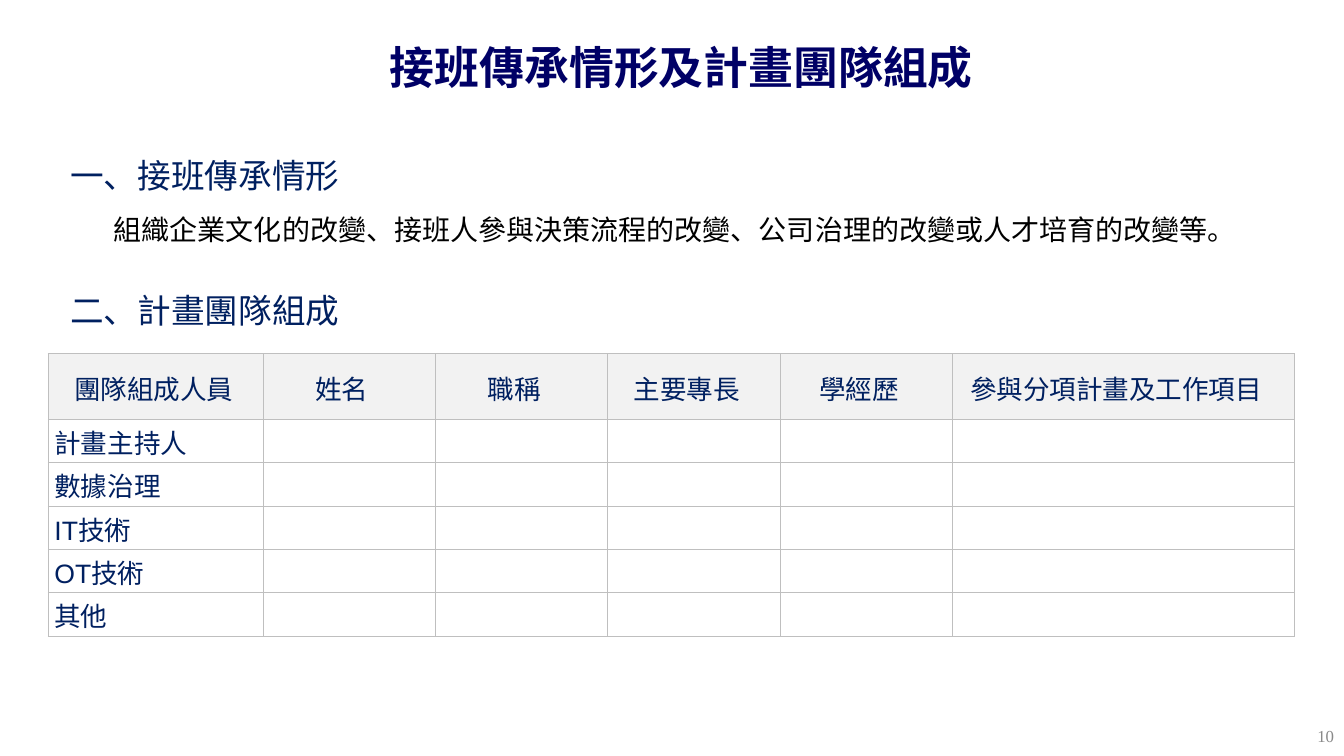
from lxml.etree import SubElement
from pptx import Presentation
from pptx.dml.color import RGBColor
from pptx.enum.text import MSO_ANCHOR, MSO_AUTO_SIZE, PP_ALIGN
from pptx.oxml.ns import qn
from pptx.util import Inches, Pt

NAVY, GRID, HEADER, WHITE = "002060", "BFBFBF", "F2F2F2", "FFFFFF"
COLUMNS = ["團隊組成人員", "姓名", "職稱", "主要專長", "學經歷", "參與分項計畫及工作項目"]
COLUMN_WIDTHS = [2.13] + [1.71] * 4 + [3.39]
MEMBERS = ["計畫主持人", "數據治理", "IT技術", "OT技術", "其他"]
HEADER_HEIGHT, ROW_HEIGHT = 0.65, 0.43


def rgb(color):
    return RGBColor.from_string(color)


def apply(target, values):
    for name, value in values.items():
        setattr(target, name, value)


def write(p, text, size, color, font="Arial", bold=False, indent=0, **layout):
    r = p.add_run()
    r.text = text
    apply(r.font, dict(size=Pt(size), name=font, bold=bold))
    r.font.color.rgb = rgb(color)
    apply(p, layout)
    if indent:
        pPr = p._p.get_or_add_pPr()
        pPr.set("marL", str(Inches(indent)))
        pPr.set("indent", "0")


def place(shape, left, top, width, height, anchor=MSO_ANCHOR.TOP):
    apply(shape, dict(left=Inches(left), top=Inches(top),
                      width=Inches(width), height=Inches(height)))
    tf = shape.text_frame
    apply(tf, dict(word_wrap=True, auto_size=MSO_AUTO_SIZE.NONE,
                   vertical_anchor=anchor))
    return tf


def add_text(s, *box, **options):
    return place(s.shapes.add_textbox(0, 0, 0, 0), *box, **options)


def format_cell(cell, fill):
    tcPr = cell._tc.get_or_add_tcPr()
    for side in ("lnL", "lnR", "lnT", "lnB"):
        ln = SubElement(tcPr, qn(f"a:{side}"), w=str(Pt(0.75)))
        line_fill = SubElement(ln, qn("a:solidFill"))
        SubElement(line_fill, qn("a:srgbClr"), val=GRID)
    cell.fill.solid()
    cell.fill.fore_color.rgb = rgb(fill)
    apply(cell, dict(vertical_anchor=MSO_ANCHOR.MIDDLE,
                     margin_left=Inches(0.03), margin_right=Inches(0.03),
                     margin_top=Inches(0.02), margin_bottom=0))


def add_team_table(s, left, top):
    heights = [HEADER_HEIGHT] + [ROW_HEIGHT] * len(MEMBERS)
    table = s.shapes.add_table(
        len(heights), len(COLUMNS), Inches(left), Inches(top),
        Inches(sum(COLUMN_WIDTHS)), Inches(sum(heights))).table
    apply(table, dict(first_row=False, horz_banding=False))
    for column, width in zip(table.columns, COLUMN_WIDTHS):
        column.width = Inches(width)
    for i, (row, height) in enumerate(zip(table.rows, heights)):
        row.height = Inches(height)
        for cell in row.cells:
            format_cell(cell, WHITE if i else HEADER)

    # Header row: text sits slightly left of centre
    for j, label in enumerate(COLUMNS):
        cell = table.cell(0, j)
        cell.margin_right = Inches(0.2)
        write(cell.text_frame.paragraphs[0], label, 19, NAVY,
              indent=0.02 if j else 0.13, alignment=PP_ALIGN.CENTER)

    # Row labels
    for i, member in enumerate(MEMBERS, start=1):
        write(table.cell(i, 0).text_frame.paragraphs[0], member, 19, NAVY,
              indent=0.03)


def add_sections(s):
    tf = add_text(s, 0.6, 1.64, 12.36, 1.7)
    sections = [
        ("一、接班傳承情形", 24, NAVY, 0, 0),
        ("組織企業文化的改變、接班人參與決策流程的改變、公司治理的改變或人才培育的改變等。",
         20, "000000", 0.43, 12),
        ("二、計畫團隊組成", 24, NAVY, 0, 36),
    ]
    for i, (text, size, color, indent, before) in enumerate(sections):
        p = tf.add_paragraph() if i else tf.paragraphs[0]
        write(p, text, size, color, indent=indent, line_spacing=Pt(18),
              space_before=Pt(before), space_after=Pt(6))


def main():
    prs = Presentation()
    apply(prs, dict(slide_width=Inches(13.33), slide_height=Inches(7.5)))
    s = prs.slides.add_slide(prs.slide_layouts[5])

    # Title
    tf = place(s.shapes.title, 2.55, 0.21, 8.42, 0.91, MSO_ANCHOR.MIDDLE)
    write(tf.paragraphs[0], "接班傳承情形及計畫團隊組成", 32, "000066",
          font="Times New Roman", bold=True, alignment=PP_ALIGN.CENTER)

    # Team table and section text
    add_team_table(s, 0.48, 3.51)
    add_sections(s)

    # Page number
    tf = add_text(s, 10.22, 7.1, 3.11, 0.4, anchor=MSO_ANCHOR.MIDDLE)
    write(tf.paragraphs[0], "10", 12, "898989", font="Times New Roman",
          alignment=PP_ALIGN.RIGHT)

    prs.save("out.pptx")


if __name__ == "__main__":
    main()
